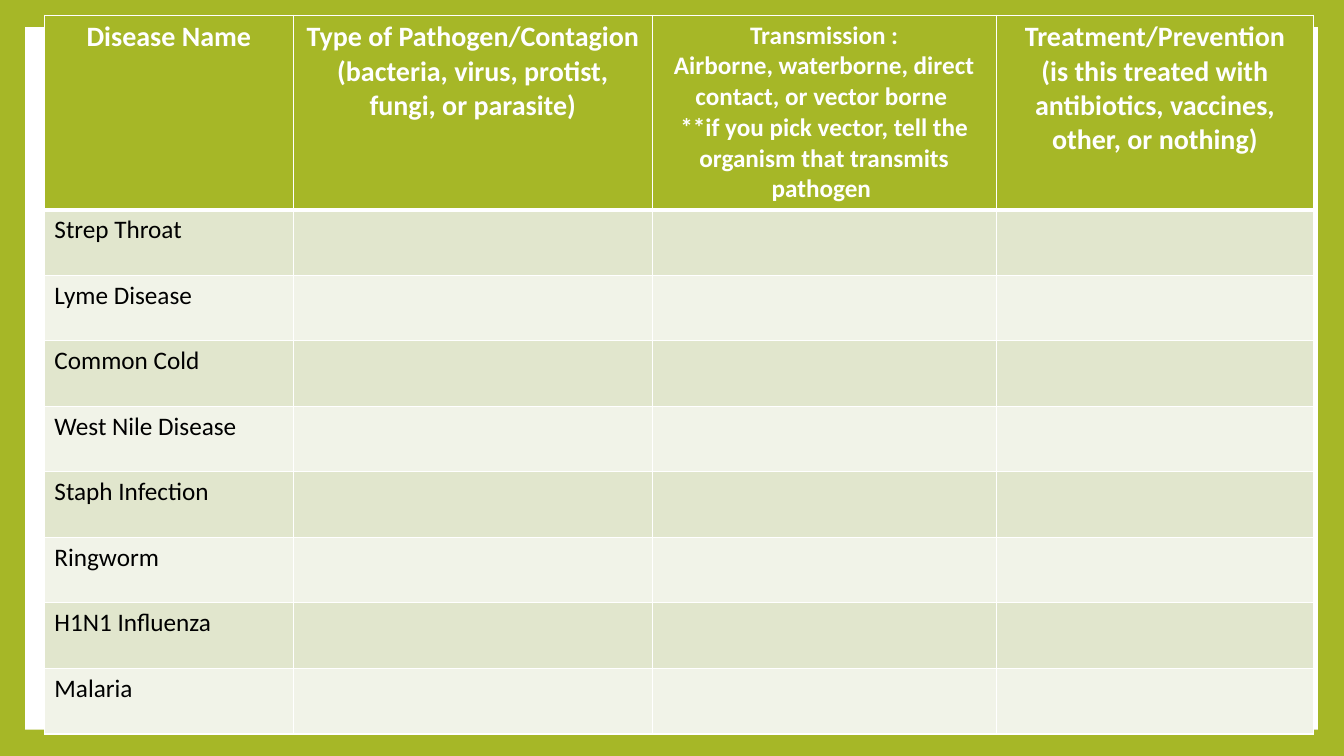
from lxml.etree import SubElement
from pptx import Presentation
from pptx.dml.color import RGBColor
from pptx.enum.shapes import MSO_SHAPE
from pptx.enum.text import PP_ALIGN
from pptx.oxml.ns import qn
from pptx.util import Inches, Pt

# Content: heading text size key, then its paragraphs
HEADINGS = [
    ("large", ["Disease Name"]),
    ("large", ["Type of Pathogen/Contagion",
               "(bacteria, virus, protist, fungi, or parasite)"]),
    ("normal", ["Transmission :",
                "Airborne, waterborne, direct contact, or vector borne ",
                "**if you pick vector, tell the organism that transmits pathogen "]),
    ("large", ["Treatment/Prevention",
               "(is this treated with antibiotics, vaccines, other, or nothing)"]),
]
DISEASES = ["Strep Throat", "Lyme Disease", "Common Cold", "West Nile Disease",
            "Staph Infection", "Ringworm", "H1N1 Influenza", "Malaria"]

THEME = {
    "font": "Calibri",
    "green": "A6B727", "white": "FFFFFF", "black": "000000",
    "bands": ["E1E6CD", "F1F3E8"],
    "large": 20, "normal": 18,
    "thin": 1, "thick": 3,
}

# Layout in inches
PANEL = (0.25, 0.27, 12.82, 6.97)
TABLE_LEFT, TABLE_TOP = 0.44, 0.15
COLUMN_WIDTHS = [2.47, 3.56, 3.41, 3.15]
HEADING_HEIGHT, DISEASE_HEIGHT = 1.93, 0.65


def rgb(color):
    return RGBColor.from_string(color)


def paint(part, color):
    part.fill.solid()
    part.fill.fore_color.rgb = rgb(color)


def write(cell, lines, size, color, bold, align):
    cell.text = "\n".join(lines)
    font_values = {"name": THEME["font"], "size": Pt(size), "bold": bold}
    for paragraph in cell.text_frame.paragraphs:
        paragraph.alignment = align
        font = paragraph.runs[0].font
        for name, value in font_values.items():
            setattr(font, name, value)
        font.color.rgb = rgb(color)


def draw_borders(cell, top, bottom):
    properties = cell._tc.get_or_add_tcPr()
    widths = {"lnL": THEME["thin"], "lnR": THEME["thin"], "lnT": top, "lnB": bottom}
    for side, width in widths.items():
        line = SubElement(properties, qn(f"a:{side}"), w=str(Pt(width)))
        fill = SubElement(line, qn("a:solidFill"))
        SubElement(fill, qn("a:srgbClr"), val=THEME["white"])


def main():
    deck = Presentation()
    deck.slide_width, deck.slide_height = Inches(13.33), Inches(7.5)
    slide = deck.slides.add_slide(deck.slide_layouts[6])
    paint(slide.background, THEME["green"])

    # White panel behind the table
    panel = slide.shapes.add_shape(MSO_SHAPE.RECTANGLE, *map(Inches, PANEL))
    panel.shadow.inherit = False
    panel.line.fill.background()
    paint(panel, THEME["white"])

    # Table grid
    row_heights = [HEADING_HEIGHT] + [DISEASE_HEIGHT] * len(DISEASES)
    diseases = slide.shapes.add_table(
        len(row_heights), len(COLUMN_WIDTHS), Inches(TABLE_LEFT), Inches(TABLE_TOP),
        Inches(sum(COLUMN_WIDTHS)), Inches(sum(row_heights))).table
    for column, width in zip(diseases.columns, COLUMN_WIDTHS):
        column.width = Inches(width)
    for row, height in zip(diseases.rows, row_heights):
        row.height = Inches(height)

    # Borders and banded fills
    for index, row in enumerate(diseases.rows):
        top = THEME["thick"] if index == 1 else THEME["thin"]
        bottom = THEME["thick"] if index == 0 else THEME["thin"]
        band = THEME["bands"][(index - 1) % 2] if index else THEME["green"]
        for cell in row.cells:
            draw_borders(cell, top, bottom)
            paint(cell, band)

    # Headings and disease names
    for column, (size, lines) in enumerate(HEADINGS):
        write(diseases.cell(0, column), lines, THEME[size], THEME["white"],
              True, PP_ALIGN.CENTER)
    for row, disease in enumerate(DISEASES, start=1):
        write(diseases.cell(row, 0), [disease], THEME["normal"], THEME["black"],
              False, PP_ALIGN.LEFT)

    deck.save("out.pptx")


if __name__ == "__main__":
    main()
